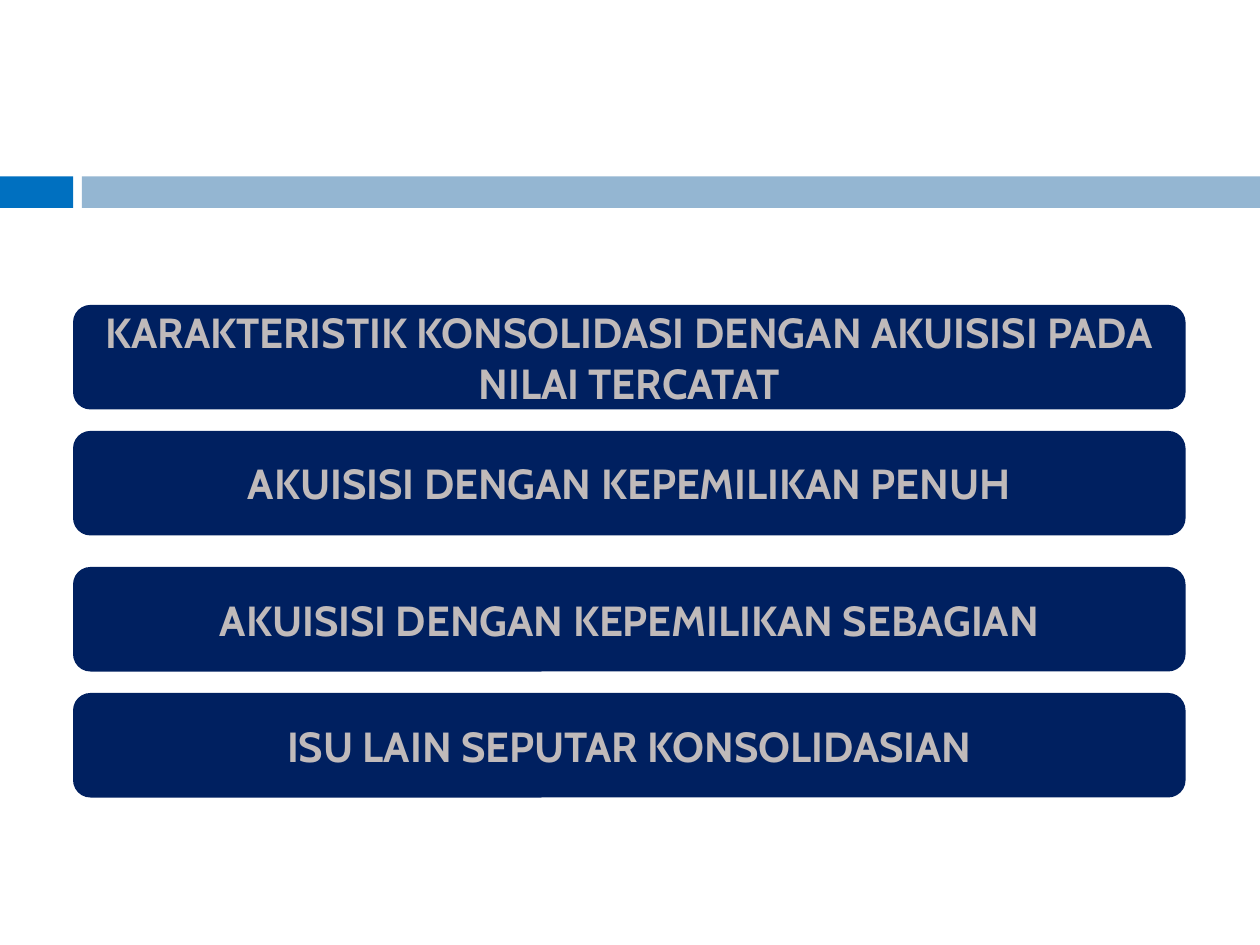
from pptx import Presentation
from pptx import util as u
from pptx.dml import color
from pptx.enum import shapes, text

COLORS = {"accent": "0070C0", "band": "94B6D2", "topic": "002060", "label": "C0BABA"}
BLANK_LAYOUT = 6


class SlideBuilder:
    font = "Cabin"
    size = u.Pt(24)

    def __init__(self, slide):
        self.slide = slide

    def block(self, kind, left, top, width, height, fill):
        bounds = [u.Inches(value) for value in (left, top, width, height)]
        shape = self.slide.shapes.add_shape(kind, *bounds)
        shape.shadow.inherit = False
        shape.fill.solid()
        shape.fill.fore_color.rgb = color.RGBColor.from_string(COLORS[fill])
        shape.line.fill.background()
        return shape

    def bar(self, left, width, fill):
        self.block(shapes.MSO_SHAPE.RECTANGLE, left, 1.4, width, 0.25, fill)

    def topic(self, top, label):
        shape = self.block(shapes.MSO_SHAPE.ROUNDED_RECTANGLE, 0.58, top, 8.83, 0.83, "topic")
        frame = shape.text_frame
        frame.word_wrap = True
        frame.vertical_anchor = text.MSO_ANCHOR.MIDDLE
        frame.text = label
        paragraph = frame.paragraphs[0]
        paragraph.alignment = text.PP_ALIGN.CENTER
        font = paragraph.runs[0].font
        font.name = self.font
        font.size = self.size
        font.bold = True
        font.color.rgb = color.RGBColor.from_string(COLORS["label"])


def main():
    presentation = Presentation()
    presentation.slide_width = u.Inches(10)
    presentation.slide_height = u.Inches(7.5)
    slide = presentation.slides.add_slide(presentation.slide_layouts[BLANK_LAYOUT])
    builder = SlideBuilder(slide)

    builder.bar(0, 0.58, "accent")
    builder.bar(0.65, 9.35, "band")

    topics = [
        (2.42, "KARAKTERISTIK KONSOLIDASI DENGAN AKUISISI PADA NILAI TERCATAT"),
        (3.42, "AKUISISI DENGAN KEPEMILIKAN PENUH"),
        (4.5, "AKUISISI DENGAN KEPEMILIKAN SEBAGIAN"),
        (5.5, "ISU LAIN SEPUTAR KONSOLIDASIAN"),
    ]
    for top, label in topics:
        builder.topic(top, label)

    presentation.save("out.pptx")


if __name__ == "__main__":
    main()
